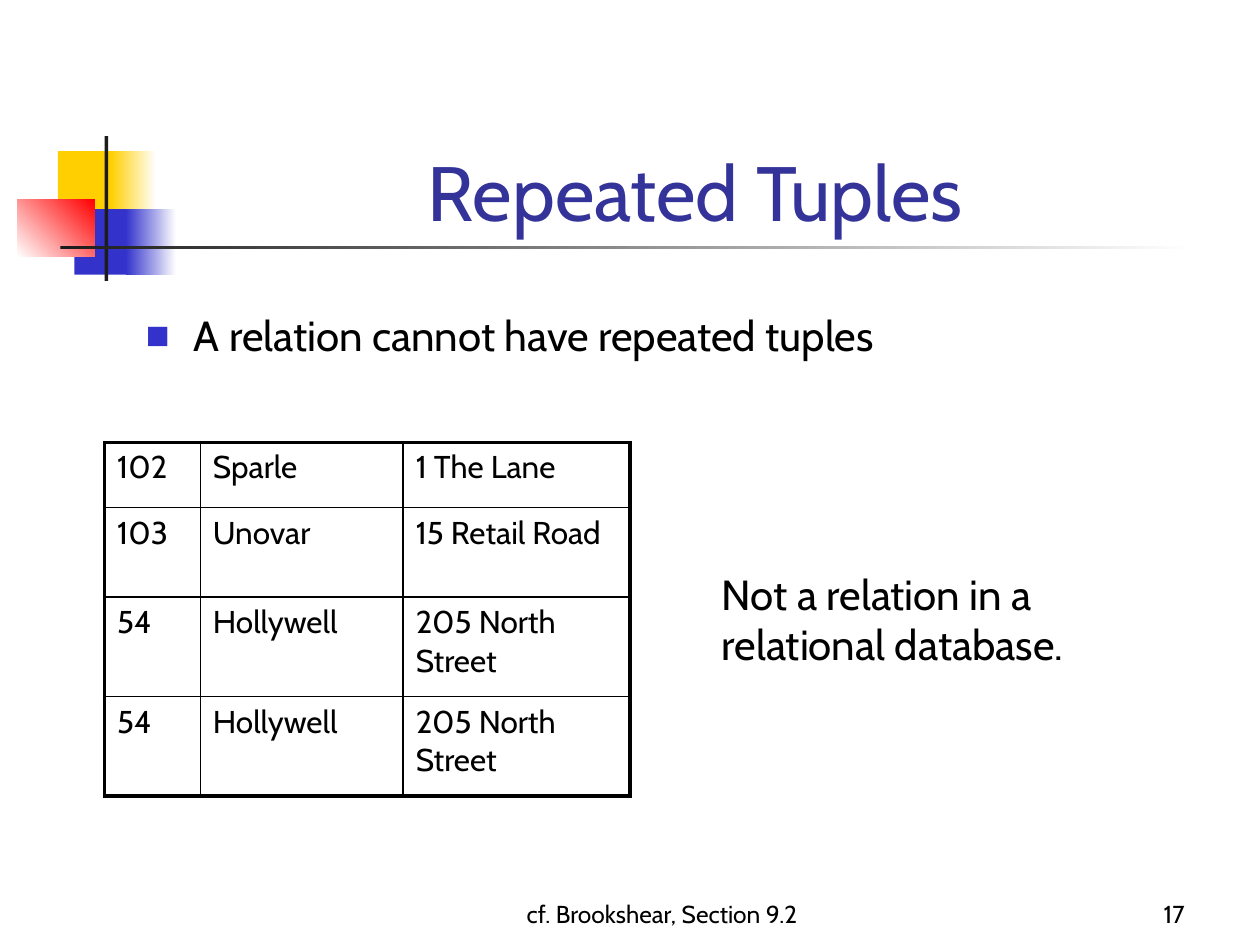
from dataclasses import dataclass

from lxml.etree import SubElement, Element
from pptx import Presentation
from pptx.dml.color import RGBColor as Rgb
from pptx.enum.shapes import MSO_SHAPE as Shape
from pptx.enum.text import MSO_ANCHOR as Anchor, MSO_AUTO_SIZE as AutoSize, PP_ALIGN as Align
from pptx.oxml.ns import qn
from pptx.util import Pt

PX = 9144  # EMU per px, 100 px to the inch


@dataclass(frozen=True)
class Theme:
    font: str = "Cabin"
    text: str = "000000"
    title: str = "333399"
    yellow: str = "FFCF01"
    blue: str = "3333CC"
    red: str = "FF0000"
    bar: str = "1C1C1C"
    paper: str = "FFFFFF"
    title_size: int = 44
    body_size: int = 24
    table_size: int = 18
    footer_size: int = 14
    thick: float = 2.25
    thin: float = 1


THEME = Theme()

ROWS = [
    ("102", "Sparle", "1 The Lane"),
    ("103", "Unovar", "15 Retail Road"),
    ("54", "Hollywell", "205 North Street"),
    ("54", "Hollywell", "205 North Street"),
]


def emu(*lengths):
    return [length * PX for length in lengths]


def apply_format(target, values):
    for name, value in values.items():
        setattr(target, name, value)


def write_line(para, text, size, color=THEME.text, **para_format):
    apply_format(para, para_format)
    span = para.add_run()
    span.text = text
    apply_format(span.font, {"name": THEME.font, "size": Pt(size)})
    span.font.color.rgb = Rgb.from_string(color)


def add_text(page, box, lines, size, color=THEME.text, frame_format=None, **para_format):
    frame = page.shapes.add_textbox(*emu(*box)).text_frame
    apply_format(frame, {"word_wrap": True, **(frame_format or {})})
    for index, line in enumerate(lines):
        para = frame.add_paragraph() if index else frame.paragraphs[0]
        write_line(para, line, size, color, **para_format)
    return frame


def add_block(page, box, start, end=None, angle=0):
    """Draw a borderless rectangle, plain or fading from start to end."""
    block = page.shapes.add_shape(Shape.RECTANGLE, *emu(*box))
    block.shadow.inherit = False
    block.line.fill.background()
    if end is None:
        block.fill.solid()
        block.fill.fore_color.rgb = Rgb.from_string(start)
        return
    block.fill.gradient()
    block.fill.gradient_angle = angle
    for stop, color in zip(block.fill.gradient_stops, (start, end)):
        stop.color.rgb = Rgb.from_string(color)


def add_ornament(page, box):
    left, top, width, height = box
    paper = THEME.paper
    blocks = [
        ((32, 12, 48, 52), THEME.yellow),
        ((74, 12, 36, 52), THEME.yellow, paper),
        ((45, 58, 46, 52), THEME.blue),
        ((86, 58, 40, 52), THEME.blue, paper),
        ((0, 50, 61, 46), paper, THEME.red, 45),
        ((69, 0, 3, height), THEME.bar),
        ((34, 87, width - 34, 3), THEME.bar, paper),
    ]
    for (x, y, w, h), *paint in blocks:
        add_block(page, (left + x, top + y, w, h), *paint)


def add_title(page, box):
    add_text(page, box, ["Repeated Tuples"], THEME.title_size, THEME.title,
             {"vertical_anchor": Anchor.BOTTOM}, alignment=Align.CENTER)


def add_bullet(page, box):
    frame = add_text(page, box, ["A relation cannot have repeated tuples"], THEME.body_size,
                     space_before=Pt(THEME.body_size * 0.2))
    props = frame.paragraphs[0]._p.get_or_add_pPr()
    indent = 38 * PX
    props.set("marL", str(indent))
    props.set("indent", str(-indent))
    color = SubElement(props, qn("a:buClr"))
    SubElement(color, qn("a:srgbClr"), val=THEME.blue)
    SubElement(props, qn("a:buSzPct"), val="60000")
    SubElement(props, qn("a:buFont"), typeface=THEME.font)
    SubElement(props, qn("a:buChar"), char="■")


def set_borders(cell, widths):
    """Set the left, right, top and bottom line widths, in points."""
    props = cell._tc.get_or_add_tcPr()
    for index, (side, width) in enumerate(zip("LRTB", widths)):
        line = Element(qn(f"a:ln{side}"), w=str(Pt(width)))
        fill = SubElement(line, qn("a:solidFill"))
        SubElement(fill, qn("a:srgbClr"), val=THEME.text)
        props.insert(index, line)


def add_tuple_table(page, box):
    columns, heights = (76, 161, 180), (52, 71, 79, 79)
    last_row, last_column = len(heights) - 1, len(columns) - 1
    table = page.shapes.add_table(len(heights), len(columns), *emu(*box)).table
    apply_format(table, {"first_row": False, "horz_banding": False})
    for column, width in zip(table.columns, emu(*columns)):
        column.width = width
    for row, height in zip(table.rows, emu(*heights)):
        row.height = height
    for r, values in enumerate(ROWS):
        for c, value in enumerate(values):
            cell = table.cell(r, c)
            cell.fill.background()
            outer = (c == 0, c == last_column, r == 0, r == last_row)
            set_borders(cell, [THEME.thick if edge else THEME.thin for edge in outer])
            write_line(cell.text_frame.paragraphs[0], value, THEME.table_size,
                       space_before=Pt(THEME.table_size * 0.2))


def add_remark(page, box):
    add_text(page, box, ["Not a relation in a", "relational database."], THEME.body_size,
             frame_format={"word_wrap": False, "auto_size": AutoSize.SHAPE_TO_FIT_TEXT})


def add_footer(page, box):
    left, top, width, height = box
    number_width = 208
    parts = [
        ("cf. Brookshear, Section 9.2", left, 317, Align.CENTER),
        ("17", left + width - number_width, number_width, Align.RIGHT),
    ]
    for text, x, part_width, alignment in parts:
        add_text(page, (x, top, part_width, height), [text], THEME.footer_size,
                 frame_format={"vertical_anchor": Anchor.BOTTOM}, alignment=alignment)


def main():
    deck = Presentation()
    apply_format(deck, dict(zip(("slide_width", "slide_height"), emu(1000, 750))))
    page = deck.slides.add_slide(deck.slide_layouts[6])
    add_ornament(page, (14, 108, 934, 115))
    add_footer(page, (367, 692, 583, 50))
    add_title(page, (126, 68, 852, 125))
    add_bullet(page, (106, 241, 811, 63))
    add_tuple_table(page, (83, 351, 417, 281))
    add_remark(page, (563, 446, 309, 90))
    deck.save("out.pptx")


if __name__ == "__main__":
    main()
